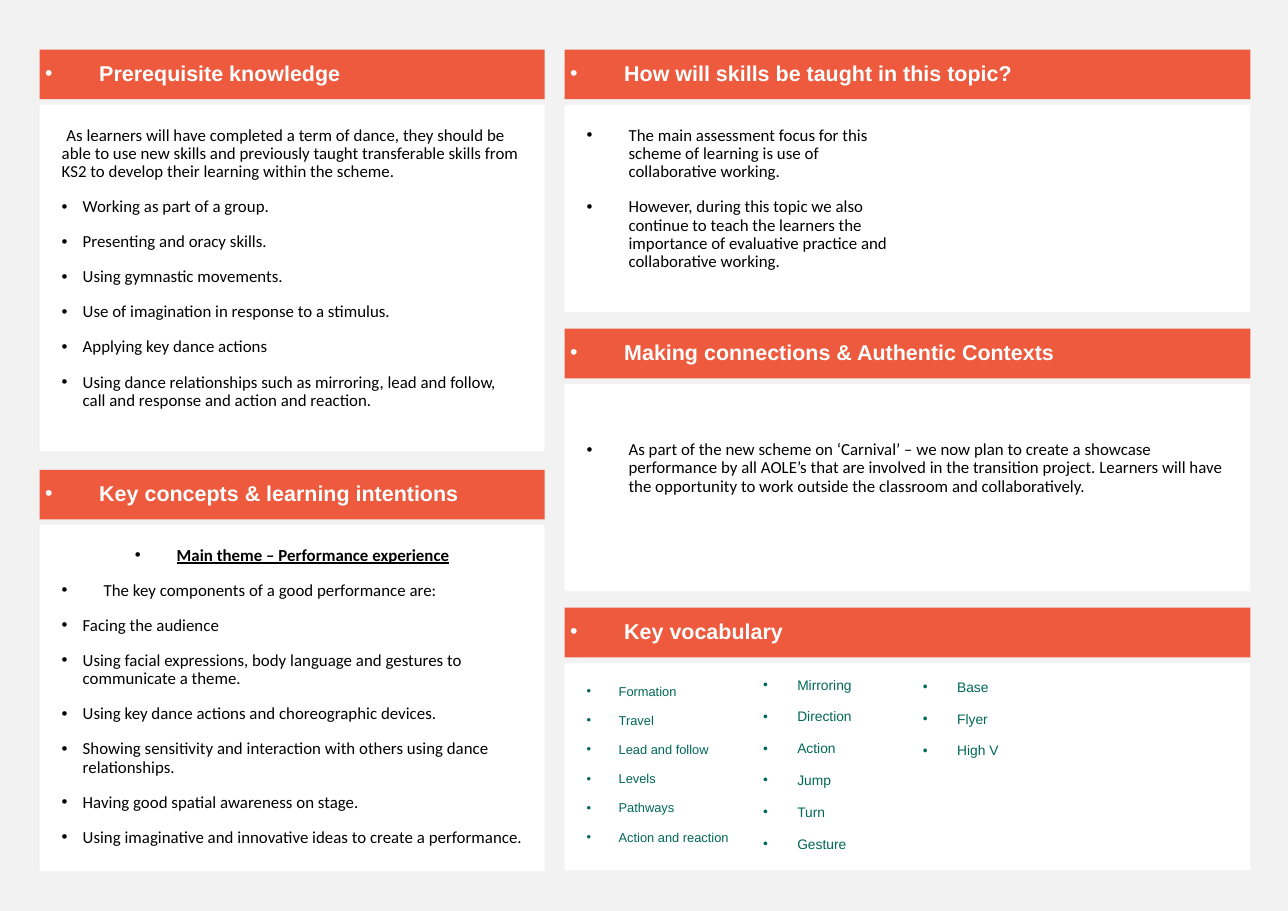
"""Builds a dance scheme overview slide with five titled panels."""
from lxml.etree import SubElement
from pptx import Presentation
from pptx.dml.color import RGBColor
from pptx.enum.shapes import MSO_SHAPE as Preset
from pptx.enum.text import MSO_ANCHOR as Anchor, MSO_AUTO_SIZE as AutoSize, PP_ALIGN as Align
from pptx.oxml.ns import qn
from pptx.util import Inches, Pt

GREY = RGBColor(0xF2, 0xF2, 0xF2)
WHITE = RGBColor(0xFF, 0xFF, 0xFF)
BLACK = RGBColor(0, 0, 0)
ORANGE = RGBColor(0xED, 0x5A, 0x3E)
GREEN = RGBColor(0x00, 0x67, 0x58)

FLAT, NEAR, FAR = 0, 0.19, 0.38
BODY = {"font": {"name": "Calibri", "size": Pt(11)}, "color": BLACK, "before": 11}
TITLE = {"font": {"name": "Arial", "size": Pt(14), "bold": True}, "color": WHITE, "before": 11}
THEME = {"font": {**BODY["font"], "bold": True, "underline": True},
         "color": BLACK, "before": 11, "align": Align.CENTER}
WORDS = {"font": {"name": "Arial", "size": Pt(9)}, "color": GREEN, "before": 11}
SMALL_WORDS = {"font": {"name": "Arial", "size": Pt(8.4)}, "color": GREEN, "before": 10}

PREREQUISITES = [
    ("As learners will have completed a term of dance, they should be able to use new skills "
     "and previously taught transferable skills from KS2 to develop their learning within "
     "the scheme.", FLAT, BODY),
    ("Working as part of a group.", NEAR, BODY),
    ("Presenting and oracy skills.", NEAR, BODY),
    ("Using gymnastic movements.", NEAR, BODY),
    ("Use of imagination in response to a stimulus.", NEAR, BODY),
    ("Applying key dance actions", NEAR, BODY),
    ("Using dance relationships such as mirroring, lead and follow, call and response "
     "and action and reaction.", NEAR, BODY),
]
CONCEPTS = [
    ("Main theme – Performance experience", FAR, THEME),
    ("The key components of a good performance are:", FAR, BODY),
    ("Facing the audience", NEAR, BODY),
    ("Using facial expressions, body language and gestures to communicate a theme.", NEAR, BODY),
    ("Using key dance actions and choreographic devices.", NEAR, BODY),
    ("Showing sensitivity and interaction with others using dance relationships.", NEAR, BODY),
    ("Having good spatial awareness on stage.", NEAR, BODY),
    ("Using imaginative and innovative ideas to create a performance.", NEAR, BODY),
]
SKILLS = [
    ("The main assessment focus for this scheme of learning is use of collaborative working.",
     FAR, BODY),
    ("However, during this topic we also continue to teach the learners the importance of "
     "evaluative practice and collaborative working.", FAR, BODY),
]
CONNECTIONS = [
    ("As part of the new scheme on ‘Carnival’ – we now plan to create a showcase performance "
     "by all AOLE’s that are involved in the transition project. Learners will have the "
     "opportunity to work outside the classroom and collaboratively.", FAR, BODY),
]
VOCABULARY = [(word, 0.29, SMALL_WORDS) for word in (
    "Formation", "Travel", "Lead and follow", "Levels", "Pathways", "Action and reaction")]
MORE_VOCABULARY = [
    ((6.87, 6.1, 0.95, 1.7), ("Mirroring", "Direction", "Action", "Jump", "Turn", "Gesture")),
    ((8.32, 6.12, 0.8, 0.83), ("Base", "Flyer", "High V")),
]

COLUMNS = [
    {"left": 0.36, "width": 4.58, "step": 3.81, "height": 3.14, "panels": [
        ("Prerequisite knowledge", PREREQUISITES, {}),
        ("Key concepts & learning intentions", CONCEPTS, {})]},
    {"left": 5.12, "width": 6.22, "step": 2.53, "height": 1.88, "panels": [
        ("How will skills be taught in this topic?", SKILLS, {"columns": 2}),
        ("Making connections & Authentic Contexts", CONNECTIONS, {"top_inset": 0.52}),
        ("Key vocabulary", VOCABULARY, {})]},
]
TOP, TITLE_HEIGHT, BODY_OFFSET = 0.45, 0.45, 0.5


def write(box, lines, inset, anchor=Anchor.TOP, wrap=True, top_inset=None, columns=1):
    """Fills a box with bulleted paragraphs."""
    frame = box.text_frame
    margins = {f"margin_{side}": Inches(inset) for side in ("left", "right", "top", "bottom")}
    if top_inset:
        margins["margin_top"] = Inches(top_inset)
    for name, value in {**margins, "vertical_anchor": anchor, "word_wrap": wrap}.items():
        setattr(frame, name, value)
    if columns > 1:
        box.element.txBody.bodyPr.set("numCol", str(columns))
    for index, (text, indent, style) in enumerate(lines):
        para = frame.add_paragraph() if index else frame.paragraphs[0]
        para.alignment = style.get("align", Align.LEFT)
        para.line_spacing = 0.9
        para.space_before = Pt(style["before"])
        span = para.add_run()
        span.text = text
        for name, value in style["font"].items():
            setattr(span.font, name, value)
        span.font.color.rgb = style["color"]
        settings = para._p.get_or_add_pPr()
        settings.set("marL", str(Inches(indent)))
        settings.set("indent", str(-Inches(indent)))
        SubElement(settings, qn("a:buFont")).set("typeface", "Arial")
        SubElement(settings, qn("a:buChar")).set("char", "•" if indent else " ")


def add_block(page, place, color):
    """Adds a plain filled rectangle."""
    box = page.shapes.add_shape(Preset.RECTANGLE, *map(Inches, place))
    box.shadow.inherit = False
    box.fill.solid()
    box.fill.fore_color.rgb = color
    box.line.fill.background()
    return box


def main():
    """Builds and saves the deck."""
    deck = Presentation()
    deck.slide_width, deck.slide_height = Inches(11.68), Inches(8.26)
    page = deck.slides.add_slide(deck.slide_layouts[6])
    page.background.fill.solid()
    page.background.fill.fore_color.rgb = GREY

    for column in COLUMNS:
        left, width = column["left"], column["width"]
        for row, (title, lines, options) in enumerate(column["panels"]):
            top = TOP + row * column["step"]
            body = add_block(page, (left, top + BODY_OFFSET, width, column["height"]), WHITE)
            write(body, lines, 0.2, **options)
            header = add_block(page, (left, top, width, TITLE_HEIGHT), ORANGE)
            write(header, [(title, 0.49, TITLE)], 0.05, Anchor.MIDDLE)

    for place, words in MORE_VOCABULARY:
        box = page.shapes.add_textbox(*map(Inches, place))
        write(box, [(word, 0.31, WORDS) for word in words], 0.05, wrap=False)
        box.text_frame.auto_size = AutoSize.SHAPE_TO_FIT_TEXT

    deck.save("out.pptx")


if __name__ == "__main__":
    main()
